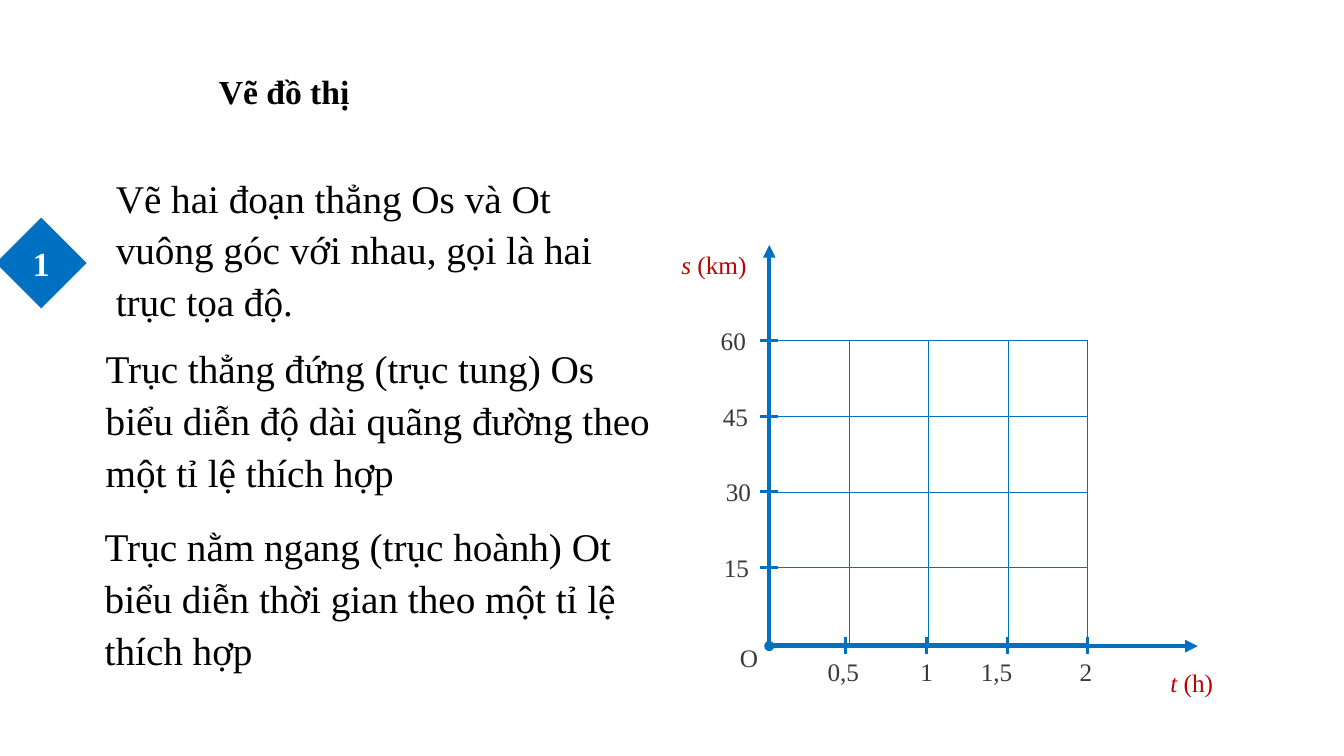
"""Builds the slide that explains how to draw a distance-time graph."""
from pptx import Presentation
from pptx.dml.color import RGBColor
from pptx.enum.shapes import MSO_CONNECTOR, MSO_SHAPE
from pptx.enum.text import MSO_ANCHOR, MSO_AUTO_SIZE, PP_ALIGN
from pptx.oxml import parse_xml
from pptx.oxml.ns import nsdecls
from pptx.util import Inches, Pt

BLUE = RGBColor(0x00, 0x70, 0xC0)
RED = RGBColor(0xC0, 0x00, 0x00)
GREY = RGBColor(0x3B, 0x38, 0x38)
BLACK = RGBColor(0x00, 0x00, 0x00)
WHITE = RGBColor(0xFF, 0xFF, 0xFF)

HEADING = {"size": Pt(24), "bold": True, "color": BLACK}
BADGE = {"size": Pt(24), "bold": True, "color": WHITE}
BODY = {"size": Pt(28), "color": BLACK}
LABEL = {"size": Pt(18), "color": GREY}
UNIT = {"size": Pt(18), "color": RED}
SYMBOL = {**UNIT, "italic": True}

ORIGIN_X, ORIGIN_Y = 7.63, 6.41
GRID_TOP, ROW_HEIGHT, COLUMN_WIDTH = 3.38, 0.75, 0.79
FIRST_TICK_X, TICK_STEP_X = 8.39, 0.8

STEPS = [
    ((1.05, 1.63, 5.21, 1.62),
     "Vẽ hai đoạn thẳng Os và Ot vuông góc với nhau, gọi là hai trục tọa độ."),
    ((0.95, 3.32, 5.72, 1.62),
     "Trục thẳng đứng (trục tung) Os biểu diễn độ dài quãng đường theo một tỉ lệ thích hợp"),
    ((0.94, 5.09, 5.51, 1.62),
     "Trục nằm ngang (trục hoành) Ot biểu diễn thời gian theo một tỉ lệ thích hợp"),
]
TIME_LABELS = [("0,5", 8.11, 0.56), ("1", 9.03, 0.33), ("1,5", 9.63, 0.74), ("2", 10.61, 0.33)]
DISTANCE_LABELS = [("60", 7.05), ("45", 7.07), ("30", 7.1), ("15", 7.08)]


class GraphSlide:
    """Holds the font and the page, and adds each kind of element to it."""

    def __init__(self, page, font_name="Times New Roman"):
        self.page = page
        self.font_name = font_name

    def fill_text(self, frame, spans, **paragraph_format):
        frame.word_wrap = True
        para = frame.paragraphs[0]
        for name, value in paragraph_format.items():
            setattr(para, name, value)
        for text, style in spans:
            span = para.add_run()
            span.text = text
            for name, value in {"name": self.font_name, **style}.items():
                if name == "color":
                    span.font.color.rgb = value
                else:
                    setattr(span.font, name, value)

    def title(self, text, bounds):
        box = self.page.shapes.title
        for name, value in zip(("left", "top", "width", "height"), bounds):
            setattr(box, name, Inches(value))
        box.text_frame.auto_size = MSO_AUTO_SIZE.NONE
        box.text_frame.vertical_anchor = MSO_ANCHOR.TOP
        self.fill_text(box.text_frame, [(text, HEADING)], alignment=PP_ALIGN.LEFT)

    def text(self, bounds, spans, group=None, **paragraph_format):
        box = (group or self.page).shapes.add_textbox(*map(Inches, bounds))
        self.fill_text(box.text_frame, spans, **paragraph_format)

    def shape(self, kind, bounds):
        shape = self.page.shapes.add_shape(kind, *map(Inches, bounds))
        shape.shadow.inherit = False
        shape.fill.solid()
        shape.fill.fore_color.rgb = BLUE
        shape.line.fill.background()
        return shape

    def badge(self, text, bounds):
        frame = self.shape(MSO_SHAPE.DIAMOND, bounds).text_frame
        frame.vertical_anchor = MSO_ANCHOR.MIDDLE
        self.fill_text(frame, [(text, BADGE)], alignment=PP_ALIGN.CENTER)

    def line(self, ends, width, group=None, arrow=False):
        line = (group or self.page).shapes.add_connector(
            MSO_CONNECTOR.STRAIGHT, *map(Inches, ends))
        line.line.color.rgb = BLUE
        line.line.width = Pt(width)
        if arrow:
            line.line._get_or_add_ln().append(
                parse_xml(f'<a:tailEnd {nsdecls("a")} type="triangle"/>'))
        line._element.spPr.append(parse_xml(f'<a:effectLst {nsdecls("a")}/>'))

    def tick(self, ends, label, bounds):
        group = self.page.shapes.add_group_shape()
        self.line(ends, 2.25, group)
        self.text(bounds, [(label, LABEL)], group)

    def grid(self, left, top, count):
        table = self.page.shapes.add_table(
            count, count, Inches(left), Inches(top),
            Inches(count * COLUMN_WIDTH), Inches(count * ROW_HEIGHT)).table
        table.first_row = table.horz_banding = False
        for cell in table.iter_cells():
            properties = cell._tc.get_or_add_tcPr()
            for side in ("lnL", "lnR", "lnT", "lnB"):
                properties.append(parse_xml(
                    f'<a:{side} {nsdecls("a")} w="{Pt(0.5)}"><a:solidFill>'
                    f'<a:srgbClr val="{BLUE}"/></a:solidFill></a:{side}>'))
            cell.fill.background()


def main():
    deck = Presentation()
    deck.slide_width, deck.slide_height = Inches(13.33), Inches(7.5)
    slide = GraphSlide(deck.slides.add_slide(deck.slide_layouts[5]))

    slide.title("Vẽ đồ thị", (2.07, 0.65, 2.24, 0.5))
    slide.grid(ORIGIN_X, GRID_TOP, 4)
    slide.badge("1", (-0.04, 2.16, 0.9, 0.9))
    for bounds, text in STEPS:
        slide.text(bounds, [(text, BODY)], line_spacing=1.1)

    slide.line((ORIGIN_X, ORIGIN_Y, ORIGIN_X, 2.43), 3, arrow=True)
    slide.line((ORIGIN_X, ORIGIN_Y, 11.88, ORIGIN_Y), 3, arrow=True)
    slide.shape(MSO_SHAPE.OVAL, (ORIGIN_X - 0.05, ORIGIN_Y - 0.05, 0.1, 0.1))
    slide.text((7.24, 6.32, 0.33, 0.4), [("O", LABEL)])
    slide.text((11.51, 6.57, 0.73, 0.4), [("t ", SYMBOL), ("(h)", UNIT)])
    slide.text((6.66, 2.42, 0.9, 0.4), [("s ", SYMBOL), ("(km)", UNIT)])

    for index, (label, left, width) in enumerate(TIME_LABELS):
        x = FIRST_TICK_X + index * TICK_STEP_X
        slide.tick((x, 6.32, x, 6.49), label, (left, 6.46, width, 0.4))
    for index, (label, left) in enumerate(DISTANCE_LABELS):
        y = GRID_TOP + index * ROW_HEIGHT
        slide.tick((7.54, y, 7.72, y), label, (left, y - 0.2, 0.68, 0.4))

    deck.save("out.pptx")


if __name__ == "__main__":
    main()
